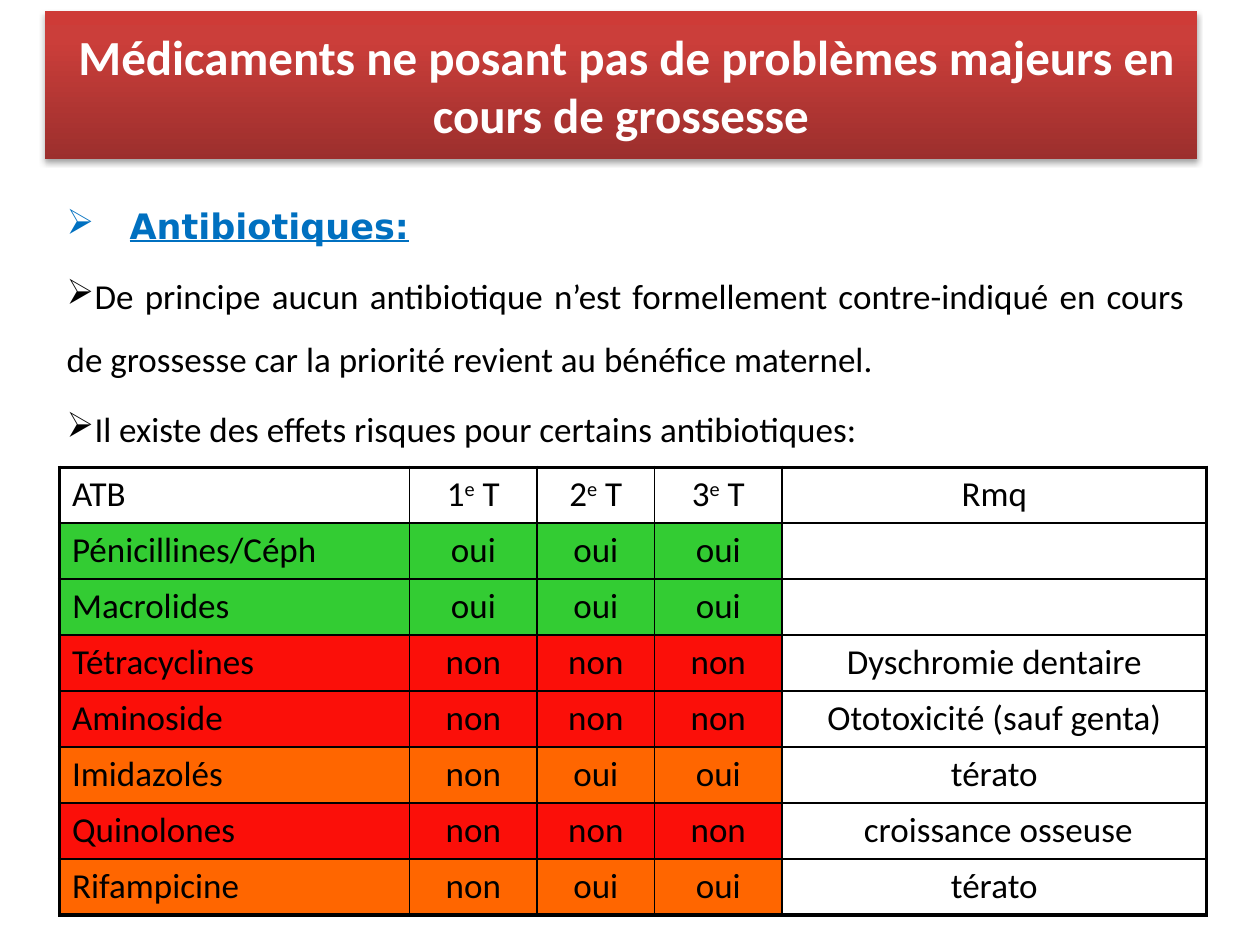
from lxml import etree
from pptx import Presentation
from pptx.dml.color import RGBColor
from pptx.enum import shapes, text
from pptx.oxml import parse_xml
from pptx.oxml.ns import nsdecls
from pptx.util import Pt

COLORS = {
    "black": "000000", "white": "FFFFFF", "blue": "0070C0",
    "green": "33CC33", "red": "FB0F09", "orange": "FF6600",
    "banner_dark": "9C2F2D", "banner_mid": "CB3E3A", "banner_light": "CE3B37",
}


def style(run, size, color="black", font="Calibri", bold=False):
    run.font.size = Pt(size)
    run.font.name = font
    run.font.bold = bold
    run.font.color.rgb = RGBColor.from_string(COLORS[color])


def add_border(cell, side, width):
    cell._tc.get_or_add_tcPr().append(parse_xml(
        f'<a:ln{side} {nsdecls("a")} w="{Pt(width)}"><a:solidFill>'
        f'<a:srgbClr val="{COLORS["black"]}"/></a:solidFill></a:ln{side}>'))


prs = Presentation()
prs.slide_width, prs.slide_height = Pt(720), Pt(540)
slide = prs.slides.add_slide(prs.slide_layouts[6])

# Title banner with three-stop gradient and soft shadow
banner = slide.shapes.add_shape(shapes.MSO_SHAPE.RECTANGLE,
                                Pt(25.5), Pt(6), Pt(658.5), Pt(85))
banner.line.fill.background()
banner.fill.gradient()
banner.fill.gradient_angle = 90
stop_list = banner.fill._fill._gradFill.gsLst
for stop in list(stop_list):
    stop_list.remove(stop)
for position, name in ((0, "banner_dark"), (80, "banner_mid"), (100, "banner_light")):
    stop_list.append(parse_xml(
        f'<a:gs {nsdecls("a")} pos="{position * 1000}">'
        f'<a:srgbClr val="{COLORS[name]}"/></a:gs>'))
banner.shadow.inherit = False
effects = banner._element.spPr.find("{*}effectLst")
effects.append(parse_xml(
    f'<a:outerShdw {nsdecls("a")} blurRad="{Pt(3.1)}" dist="{Pt(1.8)}" dir="5400000" '
    f'rotWithShape="0"><a:srgbClr val="{COLORS["black"]}"><a:alpha val="35000"/>'
    '</a:srgbClr></a:outerShdw>'))
title = banner.text_frame
title.word_wrap = True
title.vertical_anchor = text.MSO_ANCHOR.MIDDLE
title.text = " Médicaments ne posant pas de problèmes majeurs en cours de grossesse"
title.paragraphs[0].alignment = text.PP_ALIGN.CENTER
style(title.paragraphs[0].runs[0], 28, "white", bold=True)

# Introductory points
points = [
    "Antibiotiques:",
    "De principe aucun antibiotique n’est formellement contre-indiqué en cours "
    "de grossesse car la priorité revient au bénéfice maternel.",
    "Il existe des effets risques pour certains antibiotiques:",
]
intro = slide.shapes.add_textbox(Pt(31), Pt(101.5), Pt(653), Pt(382)).text_frame
intro.word_wrap = True
for i, point in enumerate(points):
    paragraph = intro.paragraphs[0] if i == 0 else intro.add_paragraph()
    paragraph.text = point
    paragraph.line_spacing = 1.5
    properties = paragraph._p.get_or_add_pPr()
    indent = Pt(36) if i == 0 else 0
    properties.set("marL", str(indent))
    properties.set("indent", str(-indent))
    if i:
        paragraph.space_before = Pt(4)
        paragraph.alignment = text.PP_ALIGN.JUSTIFY
    bullet = etree.SubElement(
        properties, "{http://schemas.openxmlformats.org/drawingml/2006/main}buChar")
    bullet.set("char", "➢")
    style(paragraph.runs[0], 20)
heading = intro.paragraphs[0].runs[0]
style(heading, 20, "blue", "DejaVu Sans", bold=True)
heading.font.underline = True

# Antibiotics by trimester: name, three answers, remark, row colour
rows = [
    ("ATB", "1e T", "2e T", "3e T", "Rmq", None),
    ("Pénicillines/Céph", "oui", "oui", "oui", "", "green"),
    ("Macrolides", "oui", "oui", "oui", "", "green"),
    ("Tétracyclines", "non", "non", "non", "Dyschromie dentaire", "red"),
    ("Aminoside", "non", "non", "non", "Ototoxicité (sauf genta)", "red"),
    ("Imidazolés", "non", "oui", "oui", "térato", "orange"),
    ("Quinolones", "non", "non", "non", " croissance osseuse", "red"),
    ("Rifampicine", "non", "oui", "oui", "térato", "orange"),
]
widths = [200, 73, 67, 73, 242.5]
last_row, last_col = len(rows) - 1, len(widths) - 1
antibiotics = slide.shapes.add_table(len(rows), len(widths), Pt(34), Pt(267),
                                     Pt(sum(widths)), Pt(32 * len(rows))).table
antibiotics.first_row = antibiotics.horz_banding = False
for column, width in zip(antibiotics.columns, widths):
    column.width = Pt(width)

for r, (*values, row_color) in enumerate(rows):
    antibiotics.rows[r].height = Pt(32)
    for c, value in enumerate(values):
        cell = antibiotics.cell(r, c)
        outer = {"L": c == 0, "R": c == last_col, "T": r == 0, "B": r == last_row}
        for side, is_outer in outer.items():
            add_border(cell, side, 2.25 if is_outer else 1)
        if row_color and c < last_col:
            cell.fill.solid()
            cell.fill.fore_color.rgb = RGBColor.from_string(COLORS[row_color])
        else:
            cell.fill.background()
        paragraph = cell.text_frame.paragraphs[0]
        if c:
            paragraph.alignment = text.PP_ALIGN.CENTER
        # Trimester headings carry a superscript ordinal
        is_trimester = r == 0 and 0 < c < last_col
        parts = (value[0], value[1], value[2:]) if is_trimester else (value,)
        for k, part in enumerate(parts):
            if part:
                run = paragraph.add_run()
                run.text = part
                style(run, 20)
                if k == 1:
                    run.font._element.set("baseline", "30000")

prs.save("out.pptx")
